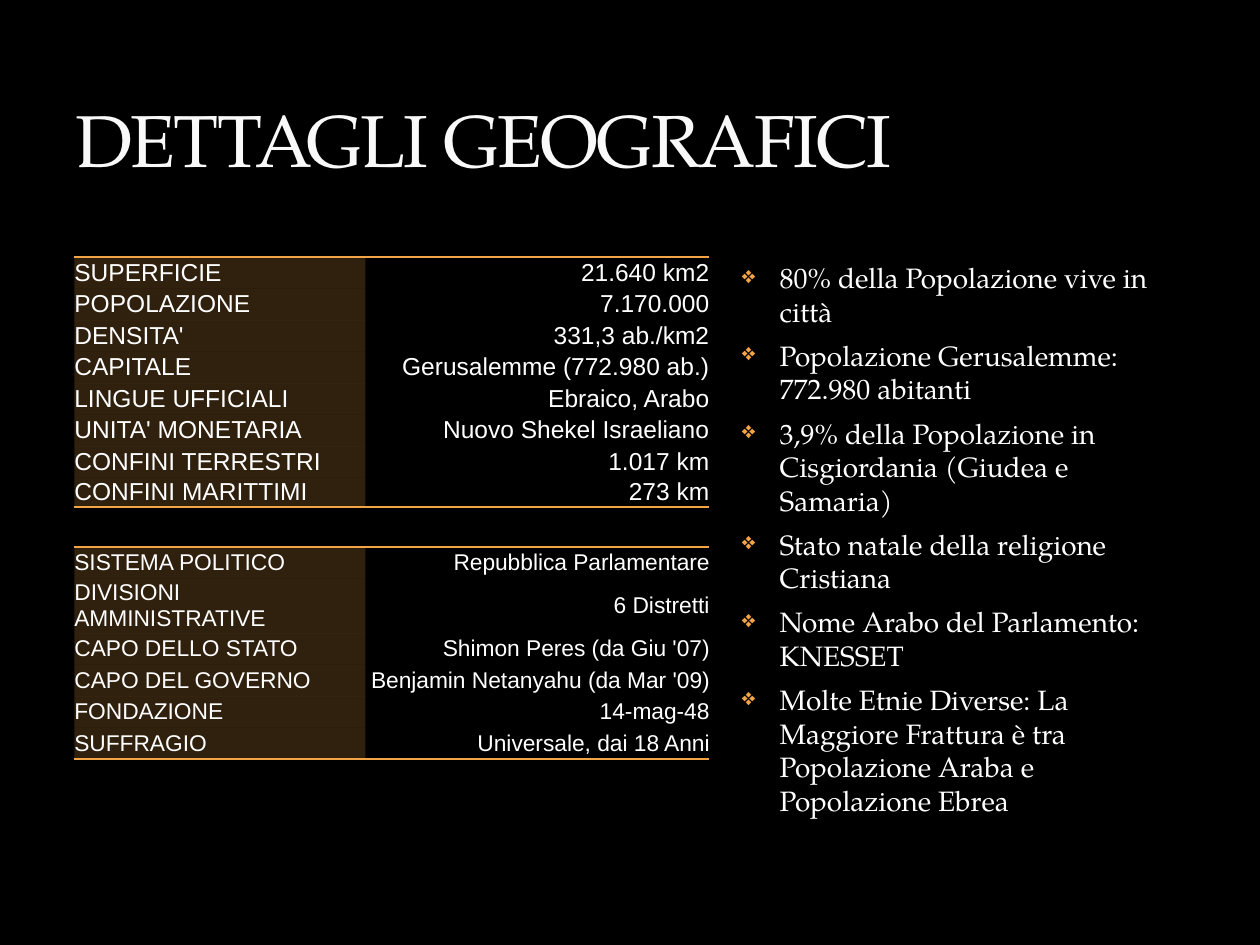
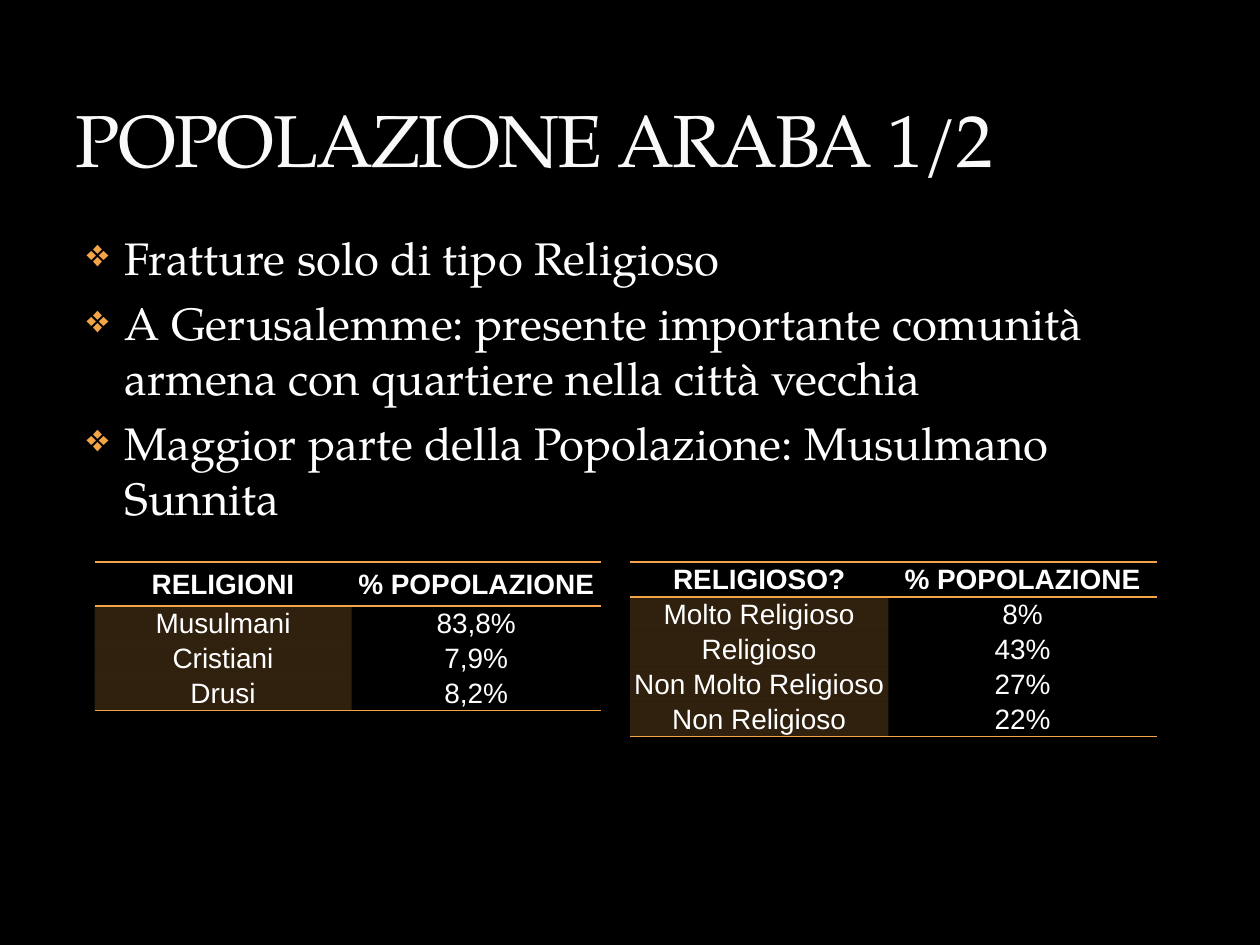
from dataclasses import dataclass

import pptx
import pptx.dml.color
import pptx.enum.text
import pptx.oxml
import pptx.oxml.ns
import pptx.slide
import pptx.table
import pptx.util
from lxml import etree

# Shared look
PX = 9144  # EMU per px, 100 px to the inch
BLACK, WHITE, TITLE_WHITE = "000000", "FFFFFF", "F9F9F9"
ORANGE, TITLE_EDGE = "F3A447", "3C4422"
SERIF, SANS = "TeX Gyre Pagella", "Arial"
NO_TABLE_STYLE = "{2D5ABB26-0587-4C30-8999-92F81FD0307C}"
ALIGN = pptx.enum.text.PP_ALIGN
ANCHOR = pptx.enum.text.MSO_ANCHOR
TITLE_BOX = (50, 17, 900, 133)
BULLET_INDENT = 30


@dataclass(frozen=True)
class BulletList:
    box: tuple[int, int, int, int]
    size: int
    points: tuple[str, ...]


@dataclass(frozen=True)
class FactTable:
    left: int
    top: int
    columns: tuple[int, int]
    heights: tuple[int, ...]
    size: int
    rows: tuple[tuple[str, str], ...]
    aligns: tuple[ALIGN, ALIGN]
    margins: tuple[int, int, int, int] = (0, 0, 0, 0)
    has_header: bool = False


def emu(px: int) -> pptx.util.Emu:
    return pptx.util.Emu(px * PX)


def color(code: str) -> pptx.dml.color.RGBColor:
    return pptx.dml.color.RGBColor.from_string(code)


def set_values(target: object, values: dict) -> None:
    for name, value in values.items():
        setattr(target, name, value)


def style_font(font, name: str, size: int, code: str, bold: bool = False) -> None:
    set_values(font, {"name": name, "size": pptx.util.Pt(size), "bold": bold})
    font.color.rgb = color(code)


def add_xml(parent, tag: str, **attributes: str):
    child = etree.SubElement(parent, pptx.oxml.ns.qn(tag))
    for name, value in attributes.items():
        child.set(name, value)
    return child


def add_solid(parent, code: str, alpha: int = 100) -> None:
    """Append a solid fill, alpha in percent."""
    tint = add_xml(add_xml(parent, "a:solidFill"), "a:srgbClr", val=code)
    if alpha < 100:
        add_xml(tint, "a:alpha", val=str(alpha * 1000))


def write_title(slide: pptx.slide.Slide, heading: str) -> None:
    title = slide.shapes.title
    sides = ("left", "top", "width", "height")
    set_values(title, dict(zip(sides, map(emu, TITLE_BOX))))
    frame = title.text_frame
    set_values(frame, {
        "text": heading,
        "word_wrap": True,
        "auto_size": pptx.enum.text.MSO_AUTO_SIZE.NONE,
        "vertical_anchor": ANCHOR.BOTTOM,
    })
    paragraph = frame.paragraphs[0]
    paragraph.alignment = ALIGN.LEFT
    run = paragraph.runs[0]
    style_font(run.font, SERIF, 42, TITLE_WHITE)
    # Tight tracking and a faint edge round the letters
    properties = run._r.get_or_add_rPr()
    properties.set("spc", "-100")
    edge = etree.Element(pptx.oxml.ns.qn("a:ln"), w="3175")
    add_solid(edge, TITLE_EDGE, 25)
    properties.insert(0, edge)


def write_bullets(slide: pptx.slide.Slide, bullets: BulletList) -> None:
    frame = slide.shapes.add_textbox(*map(emu, bullets.box)).text_frame
    frame.word_wrap = True
    for index, point in enumerate(bullets.points):
        paragraph = frame.add_paragraph() if index else frame.paragraphs[0]
        set_values(paragraph, {
            "text": point,
            "alignment": ALIGN.LEFT,
            "space_before": pptx.util.Pt(6),
        })
        style_font(paragraph.runs[0].font, SERIF, bullets.size, WHITE)
        properties = paragraph._p.get_or_add_pPr()
        properties.set("marL", str(emu(BULLET_INDENT)))
        properties.set("indent", str(-emu(BULLET_INDENT)))
        add_xml(add_xml(properties, "a:buClr"), "a:srgbClr", val=ORANGE)
        add_xml(properties, "a:buSzPct", val="85000")
        add_xml(properties, "a:buChar", char="❖")


def fill_cell(cell: pptx.table._Cell, facts: FactTable, row: int, column: int) -> None:
    is_header = facts.has_header and row == 0
    sides = ("margin_left", "margin_right", "margin_top", "margin_bottom")
    set_values(cell, {
        "text": facts.rows[row][column],
        "vertical_anchor": ANCHOR.MIDDLE,
        **dict(zip(sides, map(emu, facts.margins))),
    })
    paragraph = cell.text_frame.paragraphs[0]
    paragraph.alignment = facts.aligns[column]
    style_font(paragraph.runs[0].font, SANS, facts.size, WHITE, is_header)

    # Rules above and below the table, and below its header
    properties = cell._tc.get_or_add_tcPr()
    is_last = row == len(facts.rows) - 1
    for tag, is_ruled in (("a:lnT", row == 0), ("a:lnB", is_header or is_last)):
        if is_ruled:
            add_solid(add_xml(properties, tag, w="12700"), ORANGE)

    # Tinted label column
    if column == 0 and not is_header:
        add_solid(properties, ORANGE, 20)
    else:
        cell.fill.background()


def write_table(slide: pptx.slide.Slide, facts: FactTable) -> None:
    frame = slide.shapes.add_table(
        len(facts.rows), len(facts.columns), emu(facts.left), emu(facts.top),
        emu(sum(facts.columns)), emu(sum(facts.heights)))
    grid = frame.table
    set_values(grid, {"first_row": facts.has_header, "horz_banding": False})
    grid._tbl.tblPr.find(pptx.oxml.ns.qn("a:tableStyleId")).text = NO_TABLE_STYLE
    for column, width in zip(grid.columns, facts.columns):
        column.width = emu(width)
    for row, height in zip(grid.rows, facts.heights):
        row.height = emu(height)
    for row in range(len(facts.rows)):
        for column in range(len(facts.columns)):
            fill_cell(grid.cell(row, column), facts, row, column)


# Content of the geography slide
LABEL_VALUE = (ALIGN.LEFT, ALIGN.RIGHT)
COUNTRY = FactTable(59, 204, (231, 273), (25,) * 7 + (13,), 14, (
    ("SUPERFICIE", "21.640 km2"),
    ("POPOLAZIONE", "7.170.000"),
    ("DENSITA'", "331,3 ab./km2"),
    ("CAPITALE", "Gerusalemme (772.980 ab.)"),
    ("LINGUE UFFICIALI", "Ebraico, Arabo"),
    ("UNITA' MONETARIA", "Nuovo Shekel Israeliano"),
    ("CONFINI TERRESTRI", "1.017 km"),
    ("CONFINI MARITTIMI", "273 km"),
), LABEL_VALUE)
GOVERNMENT = FactTable(59, 434, (231, 273), (25,) * 6, 13, (
    ("SISTEMA POLITICO", "Repubblica Parlamentare"),
    ("DIVISIONI AMMINISTRATIVE", "6 Distretti"),
    ("CAPO DELLO STATO", "Shimon Peres (da Giu '07)"),
    ("CAPO DEL GOVERNO", "Benjamin Netanyahu (da Mar '09)"),
    ("FONDAZIONE", "14-mag-48"),
    ("SUFFRAGIO", "Universale, dai 18 Anni"),
), LABEL_VALUE)
COUNTRY_NOTES = BulletList((579, 202, 370, 417), 16, (
    "80% della Popolazione vive in città",
    "Popolazione Gerusalemme: 772.980 abitanti",
    "3,9% della Popolazione in Cisgiordania (Giudea e Samaria)",
    "Stato natale della religione Cristiana",
    "Nome Arabo del Parlamento: KNESSET",
    "Molte Etnie Diverse: La Maggiore Frattura è tra Popolazione Araba e "
    "Popolazione Ebrea",
))

# Content of the Arab population slide
CENTERED = (ALIGN.CENTER, ALIGN.CENTER)
THIN_MARGINS = (1, 1, 1, 0)
RELIGIONS = FactTable(75, 446, (204, 198), (35,) + (26,) * 3, 16, (
    ("RELIGIONI", "% POPOLAZIONE"),
    ("Musulmani", "83,8%"),
    ("Cristiani", "7,9%"),
    ("Drusi", "8,2%"),
), CENTERED, THIN_MARGINS, True)
OBSERVANCE = FactTable(500, 446, (205, 213), (21,) * 5, 16, (
    ("RELIGIOSO?", "% POPOLAZIONE"),
    ("Molto Religioso", "8%"),
    ("Religioso", "43%"),
    ("Non Molto Religioso", "27%"),
    ("Non Religioso", "22%"),
), CENTERED, THIN_MARGINS, True)
POPULATION_NOTES = BulletList((59, 178, 900, 496), 26, (
    "Fratture solo di tipo Religioso",
    "A Gerusalemme: presente importante comunità armena con quartiere nella "
    "città vecchia",
    "Maggior parte della Popolazione: Musulmano Sunnita",
))

SLIDES = (
    ("DETTAGLI GEOGRAFICI", COUNTRY_NOTES, (COUNTRY, GOVERNMENT)),
    ("POPOLAZIONE ARABA 1/2", POPULATION_NOTES, (RELIGIONS, OBSERVANCE)),
)


def main() -> None:
    deck = pptx.Presentation()
    set_values(deck, {"slide_width": emu(1000), "slide_height": emu(750)})
    backdrop = deck.slide_master.background.fill
    backdrop.solid()
    backdrop.fore_color.rgb = color(BLACK)
    title_only = deck.slide_layouts[5]
    for heading, notes, tables in SLIDES:
        slide = deck.slides.add_slide(title_only)
        write_title(slide, heading)
        write_bullets(slide, notes)
        for facts in tables:
            write_table(slide, facts)
    deck.save("out.pptx")


if __name__ == "__main__":
    main()
